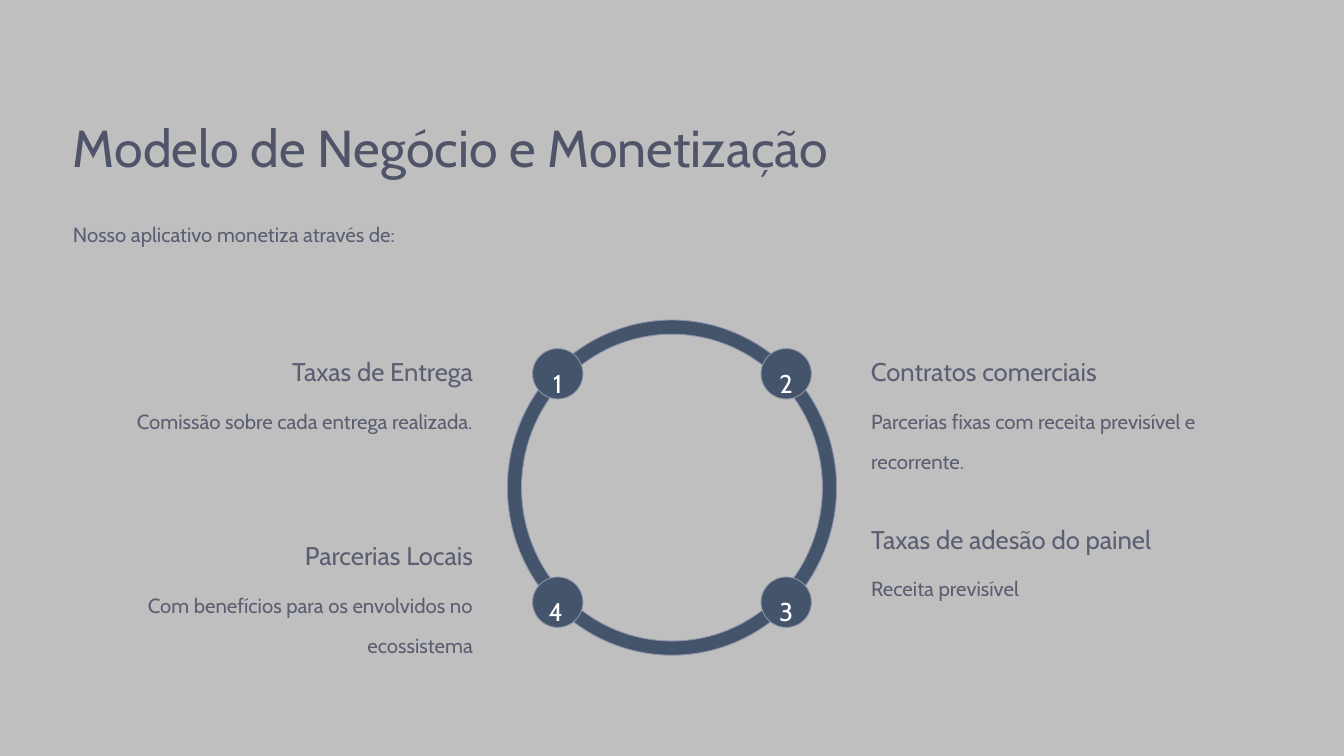
from pptx import Presentation
from pptx.dml.color import RGBColor
from pptx.enum.shapes import MSO_SHAPE as Kind
from pptx.enum.text import MSO_ANCHOR as Anchor, PP_ALIGN as Align
from pptx.util import Pt

HEX = {"back": "BFBFBF", "title": "505468", "text": "5B5F71",
       "ring": "44546A", "edge": "9095AB", "digit": "FFFFFF"}
LEFT, RIGHT, WIDE = 62.6, 746.6, 342.8
DISC = 43.2

# heading, heading width, body, body height, top, on the left side
TOPICS = [
    ("Taxas de Entrega", 223.2,
     "Comissão sobre cada entrega realizada.", 28.8, 298.8, True),
    ("Contratos comerciais", 223.2,
     "Parcerias fixas com receita previsível e recorrente.", 28.8, 298.8, False),
    ("Taxas de adesão do painel", 320.4,
     "Receita previsível", 56.9, 442.1, False),
    ("Parcerias Locais", 236.9,
     "Com benefícios para os envolvidos no ecossistema", 28.8, 456.5, True),
]
# digit, disc centre, digit shift
STEPS = [("1", 478.1, 320.4, 0), ("2", 673.9, 320.4, 0),
         ("3", 673.9, 516.2, 0), ("4", 478.1, 516.2, -1.8)]


def color(name):
    return RGBColor.from_string(HEX[name])


def label(slide, text, box, size, tone="text", space=1.25,
          align=Align.LEFT, anchor=Anchor.TOP):
    frame = slide.shapes.add_textbox(*map(Pt, box)).text_frame
    frame.margin_left = frame.margin_right = 0
    frame.margin_top = frame.margin_bottom = 0
    frame.word_wrap = True
    frame.vertical_anchor = anchor
    frame.text = text
    para = frame.paragraphs[0]
    para.alignment = align
    para.line_spacing = space
    font = para.runs[0].font
    font.name, font.size = "Cabin", Pt(size)
    font.color.rgb = color(tone)


def solid(slide, kind, box):
    """Add a shape in the ring's fill and outline."""
    shape = slide.shapes.add_shape(kind, *map(Pt, box))
    shape.shadow.inherit = False
    shape.fill.solid()
    shape.fill.fore_color.rgb = color("ring")
    shape.line.color.rgb = color("edge")
    shape.line.width = Pt(0.75)
    return shape


def topic(slide, head, width, body, height, top, left):
    align = Align.RIGHT if left else Align.LEFT
    edge = LEFT if left else RIGHT
    start = LEFT + WIDE - width if left else RIGHT
    label(slide, head, (start, top, width, 28.1), 22, align=align)
    label(slide, body, (edge, top + 38.5, WIDE, height), 17.5,
          space=1.63, align=align)


def step(slide, digit, x, y, shift):
    solid(slide, Kind.OVAL, (x - DISC / 2, y - DISC / 2, DISC, DISC))
    label(slide, digit, (x + shift - 7, y - 18, 14, 36), 22, "digit", 1.61,
          Align.CENTER, Anchor.MIDDLE)


def main():
    deck = Presentation()
    deck.slide_width, deck.slide_height = Pt(1152), Pt(648)
    slide = deck.slides.add_slide(deck.slide_layouts[6])
    fill = slide.background.fill
    fill.solid()
    fill.fore_color.rgb = color("back")

    label(slide, "Modelo de Negócio e Monetização",
          (LEFT, 85.7, 717.1, 56.2), 44.5, "title")
    label(slide, "Nosso aplicativo monetiza através de:",
          (LEFT, 177.1, 1026.7, 28.8), 17.5, space=1.63)
    ring = solid(slide, Kind.DONUT, (434.9, 274.3, 282.2, 287.3))
    ring.adjustments[0] = 0.043
    for item in STEPS:
        step(slide, *item)
    for item in TOPICS:
        topic(slide, *item)
    deck.save("out.pptx")


if __name__ == "__main__":
    main()
